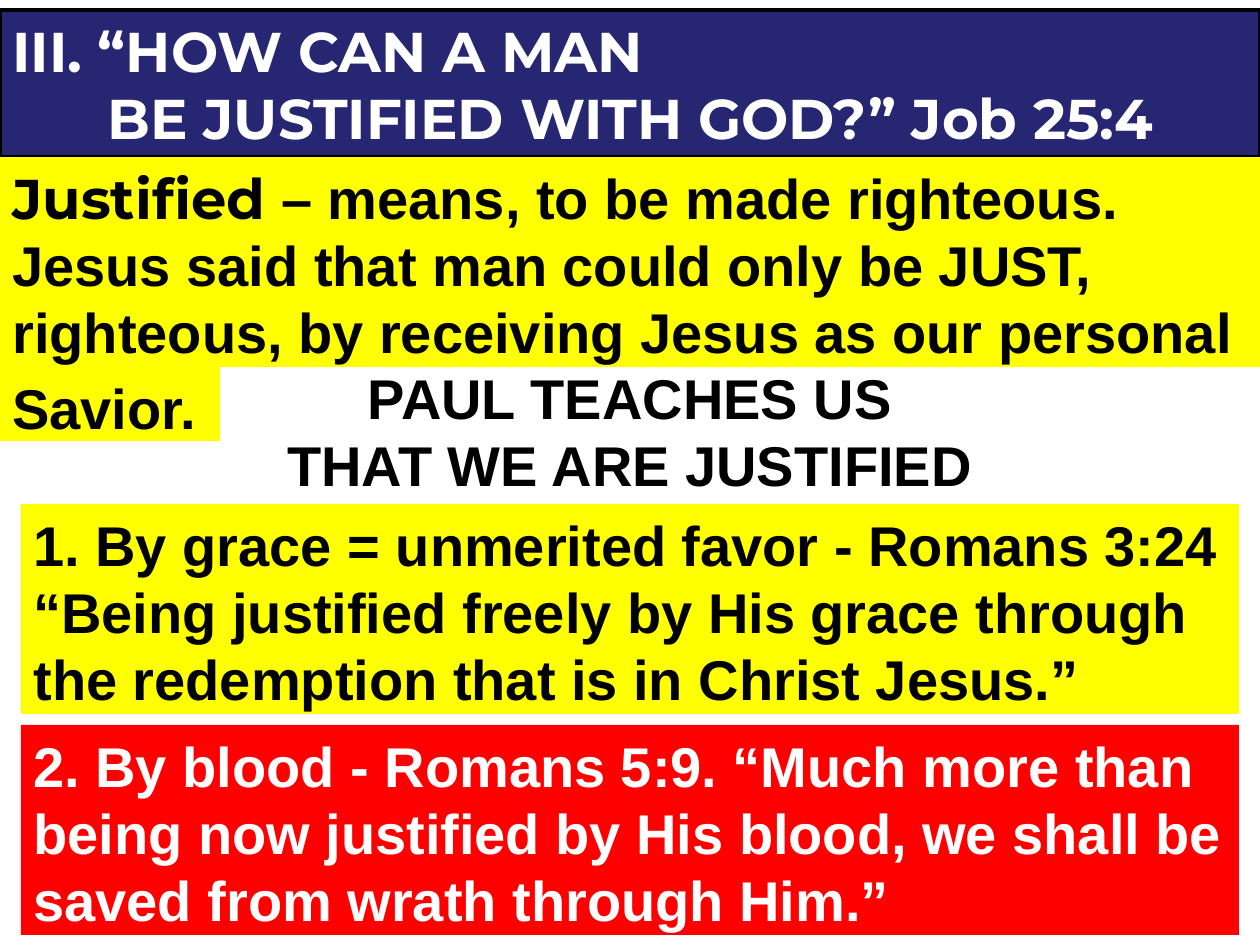
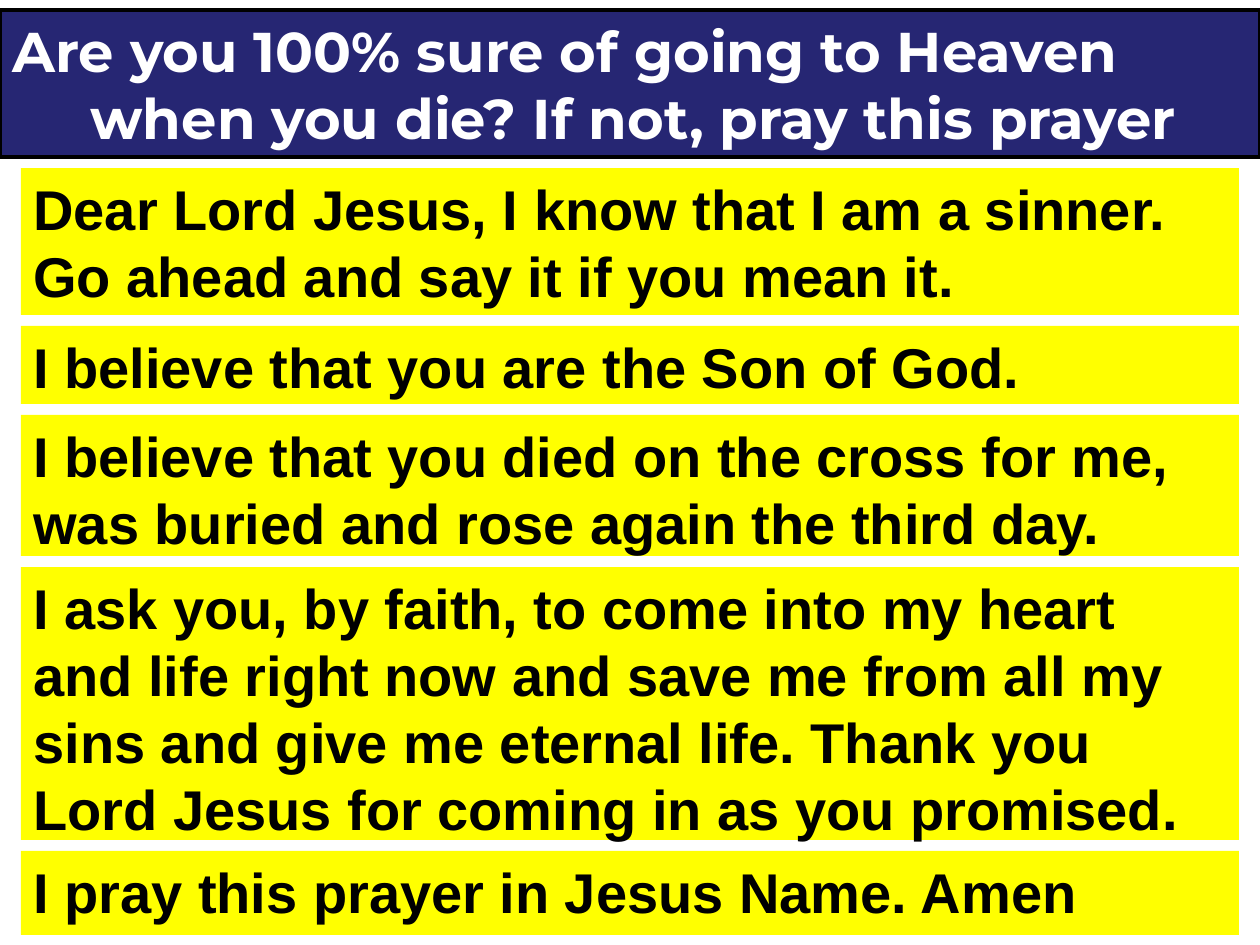
"""Build two sermon slides: a title band above stacked panels of bold text."""
from pptx import Presentation
from pptx.dml.color import RGBColor
from pptx.enum.shapes import MSO_SHAPE
from pptx.enum.text import MSO_ANCHOR, PP_ALIGN
from pptx.util import Emu, Pt

NAVY = RGBColor(0x26, 0x26, 0x73)
YELLOW = RGBColor(0xFF, 0xFF, 0x00)
RED = RGBColor(0xFF, 0x00, 0x00)
BLACK = RGBColor(0x00, 0x00, 0x00)
WHITE = RGBColor(0xFF, 0xFF, 0xFF)

BODY_FONT, TITLE_FONT = "Arial", "Montserrat"
TEXT_FORMAT = {"size": Pt(32), "bold": True}
LINE_SPACING = Pt(38.4)

PX = 914400 / 126
PAGE_WIDTH, PAGE_HEIGHT = 1260, 945
TITLE_AREA = (0, 10, PAGE_WIDTH, 147)
MARGIN, GAP = 21, 11
PANEL_WIDTH = PAGE_WIDTH - 2 * MARGIN

SLIDES = [
    {
        "title": [("III. “HOW CAN A MAN", 0, 0),
                  ("BE JUSTIFIED WITH GOD?” Job 25:4", 95, 0)],
        "heading": ((MARGIN, 357, PANEL_WIDTH, 147),
                    ["PAUL TEACHES US", "THAT WE ARE JUSTIFIED"]),
        "definition": [
            ((0, 157, PAGE_WIDTH, 210), [
                [("Justified", TITLE_FONT),
                 (" – means, to be made righteous.", BODY_FONT)],
                "Jesus said that man could only be JUST, righteous, "
                "by receiving Jesus as our personal"]),
            ((0, 367, 220, 74), ["Savior."]),
        ],
        "panels_top": 504,
        "panels": [
            (210, YELLOW, BLACK, [
                "1. By grace = unmerited favor - Romans 3:24 “Being justified "
                "freely by His grace through the redemption that is in Christ Jesus.”"]),
            (210, RED, WHITE, [
                "2. By blood - Romans 5:9. “Much more than being now justified "
                "by His blood, we shall be saved from wrath through Him.”"]),
        ],
    },
    {
        "title": [("Are you 100% sure of going to Heaven when you die? "
                   "If not, pray this prayer", 78, -78)],
        "panels_top": 168,
        "panels": [
            (147, YELLOW, BLACK, ["Dear Lord Jesus, I know that I am a sinner.",
                                  "Go ahead and say it if you mean it."]),
            (78, YELLOW, BLACK, ["I believe that you are the Son of God."]),
            (141, YELLOW, BLACK, ["I believe that you died on the cross for me, "
                                  "was buried and rose again the third day."]),
            (273, YELLOW, BLACK, [
                "I ask you, by faith, to come into my heart and life right now "
                "and save me from all my sins and give me eternal life. "
                "Thank you Lord Jesus for coming in as you promised."]),
            (84, YELLOW, BLACK, ["I pray this prayer in Jesus Name. Amen"]),
        ],
    },
]


def px(length):
    return Emu(round(length * PX))


def write(box, paragraphs, color, font=BODY_FONT, align=PP_ALIGN.LEFT):
    frame = box.text_frame
    frame.word_wrap = True
    frame.vertical_anchor = MSO_ANCHOR.TOP
    for index, spans in enumerate(paragraphs):
        para = frame.add_paragraph() if index else frame.paragraphs[0]
        para.alignment = align
        para.line_spacing = LINE_SPACING
        for text, name in [(spans, font)] if isinstance(spans, str) else spans:
            span = para.add_run()
            span.text = text
            for key, value in {**TEXT_FORMAT, "name": name}.items():
                setattr(span.font, key, value)
            span.font.color.rgb = color
    return frame


def add_panel(page, area, fill, outline=None):
    panel = page.shapes.add_shape(MSO_SHAPE.RECTANGLE, *map(px, area))
    panel.shadow.inherit = False
    panel.fill.solid()
    panel.fill.fore_color.rgb = fill
    if outline is None:
        panel.line.fill.background()
    else:
        panel.line.color.rgb = outline
        panel.line.width = Pt(2.25)
    return panel


def add_title(page, lines):
    band = add_panel(page, TITLE_AREA, NAVY, BLACK)
    frame = write(band, [text for text, _, _ in lines], WHITE, TITLE_FONT)
    for para, (_, left, first) in zip(frame.paragraphs, lines):
        properties = para._p.get_or_add_pPr()
        properties.set("marL", str(px(left)))
        properties.set("indent", str(px(first)))


def build_page(page, content):
    if "heading" in content:
        area, lines = content["heading"]
        box = page.shapes.add_textbox(*map(px, area))
        write(box, lines, BLACK, align=PP_ALIGN.CENTER)
    add_title(page, content["title"])
    for area, paragraphs in content.get("definition", []):
        write(add_panel(page, area, YELLOW), paragraphs, BLACK)
    top = content["panels_top"]
    for height, fill, color, paragraphs in content["panels"]:
        panel = add_panel(page, (MARGIN, top, PANEL_WIDTH, height), fill)
        write(panel, paragraphs, color)
        top += height + GAP


def main():
    deck = Presentation()
    deck.slide_width, deck.slide_height = px(PAGE_WIDTH), px(PAGE_HEIGHT)
    for content in SLIDES:
        build_page(deck.slides.add_slide(deck.slide_layouts[6]), content)
    deck.save("out.pptx")


if __name__ == "__main__":
    main()
